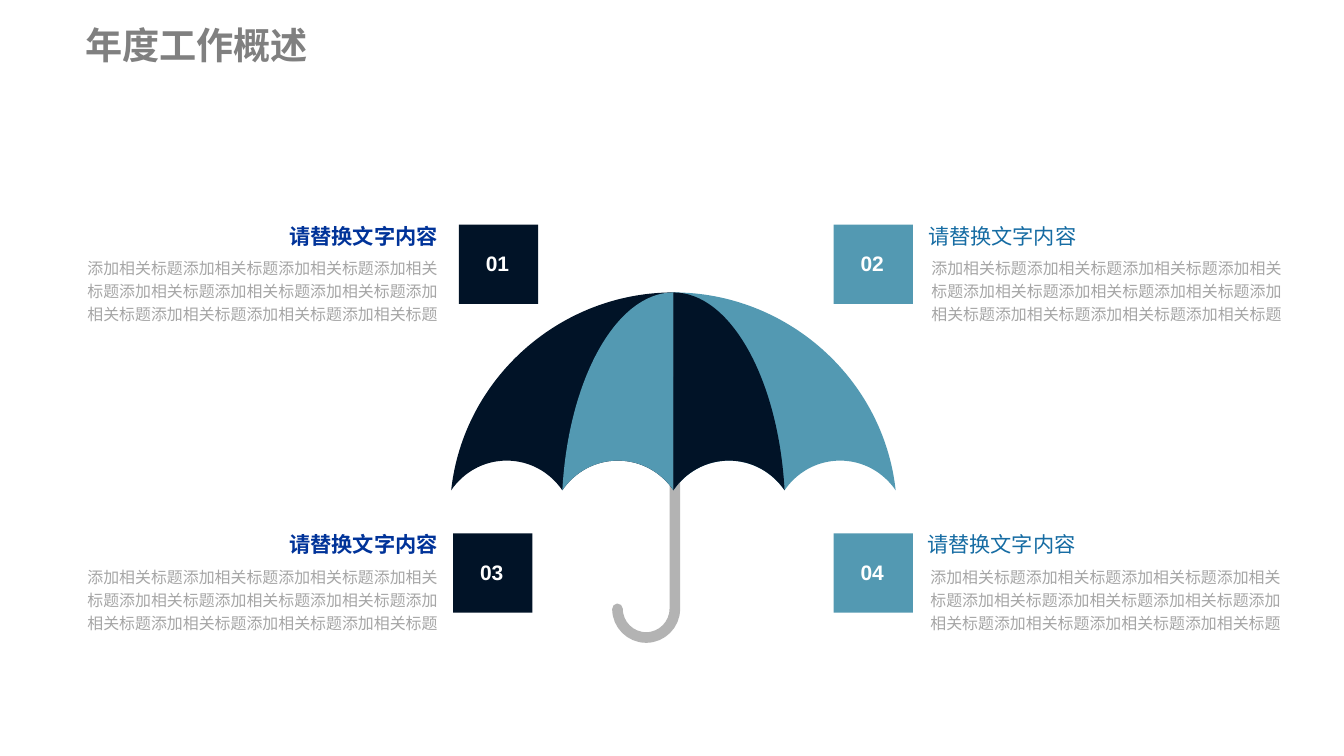
from lxml import etree
from pptx import Presentation
from pptx import util as u
from pptx.dml.color import RGBColor
from pptx.enum import shapes, text
from pptx.oxml import ns

COLORS = {
    "navy": "011327", "teal": "5399B2", "handle": "B3B3B3",
    "title": "808080", "body": "A6A6A6", "white": "FFFFFF",
    "blue": "003399", "sea": "166CA3",
}
LEFT, CENTER, RIGHT = (text.PP_ALIGN.LEFT, text.PP_ALIGN.CENTER,
                       text.PP_ALIGN.RIGHT)
MIDDLE = text.MSO_ANCHOR.MIDDLE
HEADING = "请替换文字内容"
BODY = "添加相关标题" * 11


def rgb(name):
    return RGBColor.from_string(COLORS[name])


def write(sp, words, size, color, bold=False, align=LEFT, spacing=1.2,
          anchor=text.MSO_ANCHOR.TOP, pad=0):
    tf = sp.text_frame
    frame = {"word_wrap": True, "vertical_anchor": anchor,
             "margin_left": 0, "margin_right": 0,
             "margin_top": u.Inches(pad), "margin_bottom": u.Inches(pad)}
    for name, value in frame.items():
        setattr(tf, name, value)
    p = tf.paragraphs[0]
    p.alignment, p.line_spacing = align, spacing
    r = p.add_run()
    r.text = words
    font = {"name": "Arial", "size": u.Pt(size), "bold": bold}
    for name, value in font.items():
        setattr(r.font, name, value)
    r.font.color.rgb = rgb(color)


def textbox(s, x, y, w, h, words, size, color, **fmt):
    sp = s.shapes.add_textbox(*map(u.Inches, (x, y, w, h)))
    write(sp, words, size, color, **fmt)


def fill(sp, color):
    sp.shadow.inherit = False
    sp.fill.solid()
    sp.fill.fore_color.rgb = rgb(color)
    sp.line.fill.background()


def outline(s, points, curves, close=True):
    """Freeform whose first segments are cubic curves, three points each."""
    pts = [(u.Inches(x), u.Inches(y)) for x, y in points]
    builder = s.shapes.build_freeform(*pts[0], scale=1.0)
    builder.add_line_segments(pts[1:], close=close)
    sp = builder.convert_to_shape()
    lines = list(sp._element.iter(ns.qn("a:lnTo")))
    for i in range(0, 3 * curves, 3):
        bezier = etree.Element(ns.qn("a:cubicBezTo"))
        lines[i].addprevious(bezier)
        for line in lines[i:i + 3]:
            bezier.append(line[0])
            line.getparent().remove(line)
    return sp


def scallop(x, y, w, rise):
    """Two hem curves from (x, y) across w; a negative w runs leftwards."""
    steps = ((.11, .6), (.29, 1), (.5, 1), (.71, 1), (.89, .6), (1, 0))
    return [(x + a * w, y - b * rise) for a, b in steps]


def title(s, x, y, w, h):
    sp = s.shapes.title
    sp.left, sp.top, sp.width, sp.height = map(u.Inches, (x, y, w, h))
    write(sp, "年度工作概述", 28, "title", bold=True, spacing=1.0,
          anchor=MIDDLE)
    sp.text_frame.auto_size = text.MSO_AUTO_SIZE.SHAPE_TO_FIT_TEXT


def handle(s, x, y, w, h):
    radius, bend = w / 2, .55 * w / 2
    mid, base, bottom = x + radius, y + h - radius, y + h
    points = [(x, base), (x, base + bend), (mid - bend, bottom),
              (mid, bottom), (mid + bend, bottom), (x + w, base + bend),
              (x + w, base), (x + w, y)]
    sp = outline(s, points, curves=2, close=False)
    sp.shadow.inherit = False
    sp.fill.background()
    sp.line.color.rgb = rgb("handle")
    sp.line.width = u.Pt(8)
    ln = sp.line._get_or_add_ln()
    ln.set("cap", "rnd")
    etree.SubElement(ln, ns.qn("a:round"))


def canopy(s, x, y, w, h):
    apex, hem, gap = x + w / 2, y + h, w / 4
    # Wide wings first, then the inner panels over them
    for rib, color in ((4, "teal"), (0, "navy"), (1, "teal"), (3, "navy")):
        dx = (rib - 2) * gap
        points = [(apex, y), (apex + .51 * dx, y),
                  (apex + .945 * dx, y + .435 * h), (apex + dx, hem)]
        step = -1 if rib > 2 else 1
        for i in range(rib, 2, step):
            points += scallop(x + i * gap, hem, step * gap, .31)
        fill(outline(s, points, curves=len(points) // 3), color)


def item(s, x, y, w, number, on_left):
    side, body_w = .83, 3.69 if on_left else 3.7
    if on_left:
        square_x, body_x, head_w = x + w - side, x, 1.8
        head_x = x + body_w - head_w
        square, head, align = "navy", "blue", RIGHT
    else:
        square_x, body_x, head_w = x, x + w - body_w, 1.76
        head_x = body_x
        square, head, align = "teal", "sea", LEFT
    textbox(s, head_x, y, head_w, .39, HEADING, 16, head, bold=on_left,
            align=align, pad=.11)
    textbox(s, body_x, y + .5, body_w, .69, BODY, 12, "body", align=RIGHT)
    # Numbered square
    sp = s.shapes.add_shape(shapes.MSO_SHAPE.ROUNDED_RECTANGLE,
                            *map(u.Inches, (square_x, y + .18, side, side)))
    sp.adjustments[0] = 0
    fill(sp, square)
    textbox(s, square_x + .07, y + .28, .67, .55, number, 15.8, "white",
            bold=True, align=CENTER, anchor=MIDDLE, pad=.11)


def main():
    prs = Presentation()
    prs.slide_width, prs.slide_height = u.Inches(14.06), u.Inches(7.91)
    s = prs.slides.add_slide(prs.slide_layouts[5])
    title(s, .89, .22, 2.53, .49)
    # Umbrella
    handle(s, 6.46, 3.99, .6, 2.68)
    canopy(s, 4.72, 3.06, 4.65, 2.07)
    # Four numbered items
    rows = ((2.17, 4.74, 4.69), (5.4, 4.68, 4.68))
    for row, (y, left_w, right_w) in enumerate(rows):
        item(s, .89, y, left_w, f"{2 * row + 1:02}", True)
        item(s, 8.72, y, right_w, f"{2 * row + 2:02}", False)
    prs.save("out.pptx")


if __name__ == "__main__":
    main()
